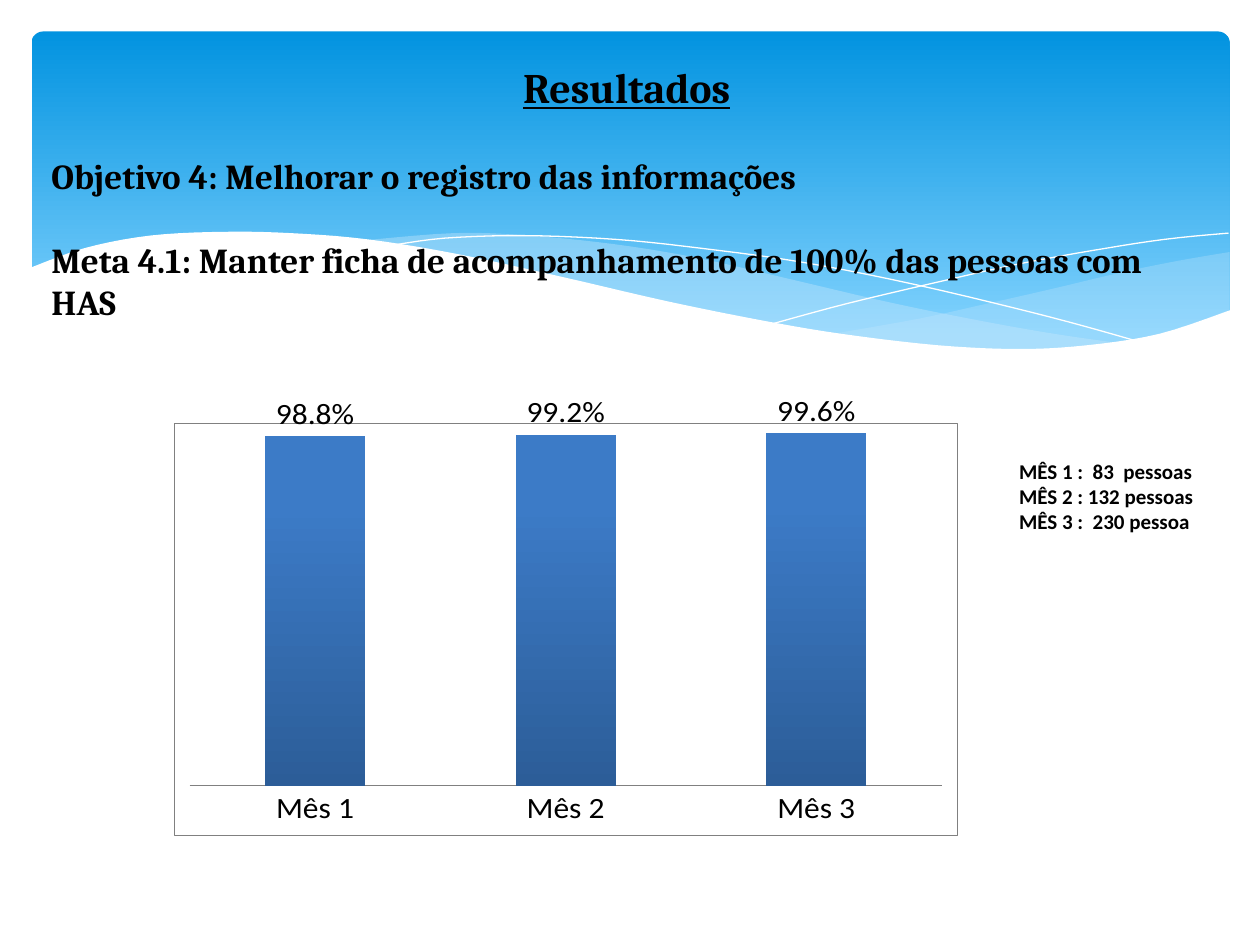
from lxml.etree import SubElement
from pptx import Presentation
from pptx.chart.data import CategoryChartData
from pptx.dml.color import RGBColor
from pptx.enum.chart import XL_CHART_TYPE as ChartType, XL_LABEL_POSITION as LabelPosition
from pptx.enum.chart import XL_TICK_MARK as Tick
from pptx.enum.shapes import MSO_SHAPE as Shape
from pptx.enum.text import PP_ALIGN as Align
from pptx.oxml import parse_xml
from pptx.oxml.ns import nsdecls, qn
from pptx.util import Inches, Pt

TITLE = "Resultados"
GOALS = [
    "Objetivo 4: Melhorar o registro das informações",
    "Meta 4.1: Manter ficha de acompanhamento de 100% das pessoas com HAS",
]
COUNTS = ["MÊS 1 :  83  pessoas", "MÊS 2 : 132 pessoas", "MÊS 3 :  230 pessoa"]
RATES = {"Mês 1": 0.988, "Mês 2": 0.992, "Mês 3": 0.996}

BLACK, WHITE, GRAY, MIST = "000000", "FFFFFF", "808080", "C6E7FC"
SKY = [(0, "0293E0"), (0.9, "83D3FE")]
BAR = [(0.2, "3C7BC7"), (1, "2C5D98")]

RIGHT_VEIL = [
    [(9.76, 2), (9.35, 2.07), (8.91, 2.16), (8.32, 2.3), (7.79, 2.42), (7.29, 2.53), (6.61, 2.65)],
    [(6.61, 2.65), (7.05, 2.71), (7.57, 2.76), (8.14, 2.78), (8.63, 2.75), (9.13, 2.67), (9.76, 2.47)],
]
MIDDLE_VEIL = [
    [(8.93, 2.73), (8.37, 2.65), (7.75, 2.54), (7.06, 2.4), (6.29, 2.22), (5.55, 2.05),
     (4.89, 1.94), (4.2, 1.87), (3.61, 1.85), (2.86, 1.91)],
    [(2.86, 1.91), (3.62, 2.03), (4.49, 2.22), (5.3, 2.4), (6.01, 2.55), (6.65, 2.66),
     (7.22, 2.74), (7.85, 2.78), (8.38, 2.78), (8.93, 2.73)],
]
FALLING_STRAND = [
    [(3.09, 1.95), (3.53, 1.89), (4.16, 1.87), (4.89, 1.9), (5.56, 1.97), (6.36, 2.08),
     (7.27, 2.26), (8.31, 2.51), (9.07, 2.72)],
]
RISING_STRAND = [
    [(6.13, 2.57), (6.72, 2.41), (7.48, 2.23), (8.06, 2.1), (8.66, 1.99), (9.24, 1.9), (9.75, 1.85)],
]
WHITE_WAVE = [
    [(9.77, 2.46), (9.2, 2.65), (8.63, 2.74), (8.09, 2.77), (7.44, 2.74), (6.68, 2.65),
     (6.03, 2.54), (5.29, 2.39), (4.47, 2.2), (3.65, 2.02), (2.92, 1.9), (2.3, 1.85),
     (1.77, 1.84), (1.19, 1.87), (0.67, 1.97), (0.23, 2.13)],
    [(0.23, 3.29), (9.77, 3.29)],
]


def color(value):
    return RGBColor.from_string(value)


def paint(fill, value, opacity=100):
    fill.solid()
    fill.fore_color.rgb = color(value)
    if opacity < 100:
        tint = fill._xPr.find(qn("a:solidFill"))[0]
        SubElement(tint, qn("a:alpha"), val=str(opacity * 1000))


def shade(fill, stops):
    fill.gradient()
    fill.gradient_angle = 270
    for stop, (position, value) in zip(fill.gradient_stops, stops):
        stop.position = position
        stop.color.rgb = color(value)


def style(font, name, size, bold=False):
    font.name, font.size, font.bold = name, Pt(size), bold
    font.color.rgb = color(BLACK)


def smooth(points, steps=5):
    padded = [points[0], *points, points[-1]]
    curve = [points[0]]
    for a, b, c, d in zip(padded, padded[1:], padded[2:], padded[3:]):
        for step in range(1, steps + 1):
            t = step / steps
            curve.append(tuple(
                (2 * q + (r - p) * t + (2 * p - 5 * q + 4 * r - s) * t**2
                 + (3 * q - p - 3 * r + s) * t**3) / 2
                for p, q, r, s in zip(a, b, c, d)))
    return curve


def add_wave(slide, curves, fill=None, opacity=100):
    points = [(Inches(x), Inches(y)) for curve in curves for x, y in smooth(curve)]
    builder = slide.shapes.build_freeform(*points[0])
    builder.add_line_segments(points[1:], close=bool(fill))
    wave = builder.convert_to_shape()
    wave.shadow.inherit = False
    if fill:
        paint(wave.fill, fill, opacity)
        wave.line.fill.background()
    else:
        wave.fill.background()
        paint(wave.line.fill, WHITE)
        wave.line.width = Pt(0)


def add_text(slide, place, lines, font, size):
    box = slide.shapes.add_textbox(*map(Inches, place))
    frame = box.text_frame
    frame.word_wrap = True
    frame.text = "\n".join(lines)
    for para in frame.paragraphs:
        style(para.font, font, size, True)
    return frame.paragraphs


def area_style(border):
    line = (f'<a:ln w="3175"><a:solidFill><a:srgbClr val="{GRAY}"/></a:solidFill></a:ln>'
            if border else "<a:ln><a:noFill/></a:ln>")
    return parse_xml(f'<c:spPr {nsdecls("c", "a")}><a:solidFill><a:srgbClr val="{WHITE}"/>'
                     f'</a:solidFill>{line}</c:spPr>')


def frame_chart(chart, x, y, w, h):
    body = chart.element.find(qn("c:chart"))
    plot_area = body.find(qn("c:plotArea"))
    for layout in plot_area.findall(qn("c:layout")):
        plot_area.remove(layout)
    sizes = "".join(f'<c:{key} val="{value}"/>' for key, value in
                    [("layoutTarget", "inner"), ("xMode", "edge"), ("yMode", "edge"),
                     ("x", x), ("y", y), ("w", w), ("h", h)])
    plot_area.insert(0, parse_xml(
        f'<c:layout {nsdecls("c")}><c:manualLayout>{sizes}</c:manualLayout></c:layout>'))
    plot_area.append(area_style(False))
    body.addnext(area_style(True))


def add_rates(slide, place):
    data = CategoryChartData(number_format="0.0%")
    data.categories = list(RATES)
    data.add_series("Series 1", list(RATES.values()))
    chart = slide.shapes.add_chart(ChartType.COLUMN_CLUSTERED, *map(Inches, place), data).chart
    chart.has_legend = chart.has_title = False
    style(chart.font, "Calibri", 10)
    plot = chart.plots[0]
    plot.gap_width, plot.overlap, plot.vary_by_categories = 150, -25, False
    shade(plot.series[0].format.fill, BAR)
    plot.has_data_labels = True
    labels = plot.data_labels
    labels.show_value = True
    labels.position = LabelPosition.OUTSIDE_END
    labels.number_format, labels.number_format_is_linked = "0.0%", False
    style(labels.font, "Calibri", 18)
    months, scale = chart.category_axis, chart.value_axis
    months.major_tick_mark = Tick.NONE
    style(months.tick_labels.font, "Calibri", 18)
    paint(months.format.line.fill, GRAY)
    months.format.line.width = Pt(0.25)
    scale.minimum_scale, scale.maximum_scale, scale.major_unit = 0, 1, 0.1
    scale.has_major_gridlines = scale.visible = False
    frame_chart(chart, 0.02, 0.02, 0.96, 0.86)


def main():
    deck = Presentation()
    deck.slide_width, deck.slide_height = Inches(10), Inches(7.5)
    slide = deck.slides.add_slide(deck.slide_layouts[6])

    banner = slide.shapes.add_shape(
        Shape.ROUNDED_RECTANGLE, *map(Inches, (0.25, 0.25, 9.51, 2.7)))
    banner.adjustments[0] = 0.034
    banner.shadow.inherit = False
    banner.line.fill.background()
    shade(banner.fill, SKY)

    add_wave(slide, RIGHT_VEIL, MIST, 29)
    add_wave(slide, MIDDLE_VEIL, MIST, 40)
    add_wave(slide, FALLING_STRAND)
    add_wave(slide, RISING_STRAND)
    add_wave(slide, WHITE_WAVE, WHITE)

    title, *goals = add_text(slide, (0.31, 0.44, 9.33, 2.15), [TITLE, *GOALS], "Cambria", 20)
    title.alignment = Align.CENTER
    title.font.size, title.font.underline = Pt(24), True
    for goal in goals:
        goal.space_before = Pt(24)
    add_text(slide, (7.99, 3.59, 1.9, 0.71), COUNTS, "Calibri", 12)
    add_rates(slide, (1.38, 3.12, 6.22, 3.51))

    deck.save("out.pptx")


if __name__ == "__main__":
    main()
